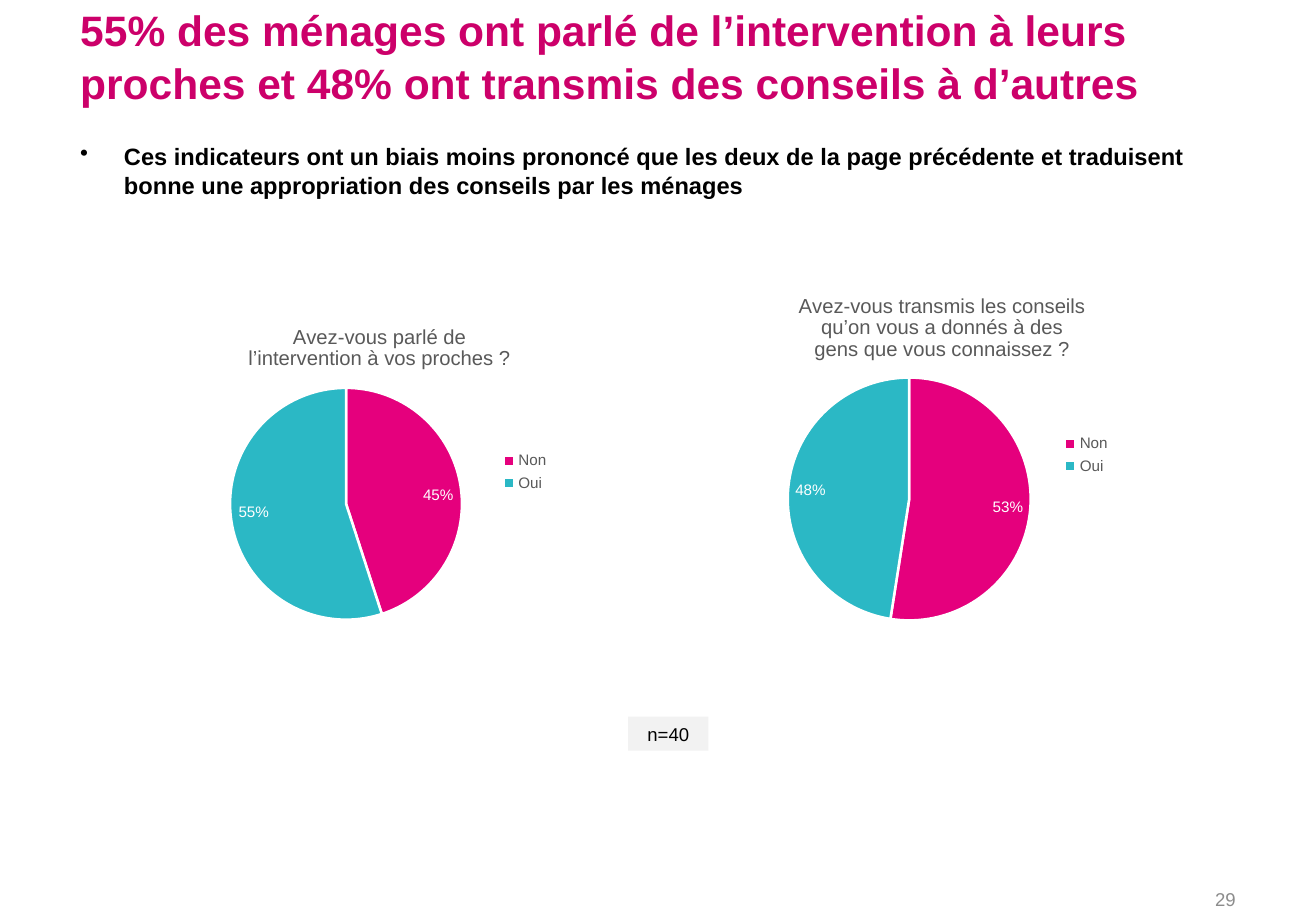
import pptx
import pptx.chart.data
import pptx.dml.color
import pptx.enum.chart
import pptx.enum.shapes
import pptx.enum.text
import pptx.oxml
import pptx.oxml.ns
import pptx.util
from pptx.util import Inches

FONT = "Arial"
BLACK, WHITE, GREY = "000000", "FFFFFF", "595959"
ANSWERS = {"Non": "E5007D", "Oui": "2BB8C5"}
ANCHOR = pptx.enum.text.MSO_ANCHOR
ALIGN = pptx.enum.text.PP_ALIGN


def color(value):
    return pptx.dml.color.RGBColor.from_string(value)


def style_font(font, size, value, bold=False):
    font.name = FONT
    font.size = pptx.util.Pt(size)
    font.bold = bold
    font.color.rgb = color(value)


def write_text(shape, text, size, value, bold=False, align=ALIGN.LEFT, anchor=ANCHOR.TOP):
    frame = shape.text_frame
    frame.word_wrap = True
    frame.vertical_anchor = anchor
    frame.margin_left = frame.margin_right = Inches(0.12)
    frame.margin_top = frame.margin_bottom = Inches(0.06)
    paragraph = frame.paragraphs[0]
    paragraph.alignment = align
    run = paragraph.add_run()
    run.text = text
    style_font(run.font, size, value, bold)
    return paragraph


def add_text(slide, box, *content, **options):
    shape = slide.shapes.add_textbox(*map(Inches, box))
    return write_text(shape, *content, **options)


def add_bullet(paragraph, indent):
    properties = paragraph._p.get_or_add_pPr()
    properties.set("marL", str(Inches(indent)))
    properties.set("indent", str(-Inches(indent)))
    bullet = pptx.oxml.parse_xml(
        f'<a:buChar {pptx.oxml.ns.nsdecls("a")} char="•"/>')
    properties.append(bullet)


def add_sample_size(slide, box, text):
    shape = slide.shapes.add_shape(
        pptx.enum.shapes.MSO_SHAPE.RECTANGLE, *map(Inches, box))
    shape.shadow.inherit = False
    shape.fill.solid()
    shape.fill.fore_color.rgb = color("F2F2F2")
    shape.line.fill.background()
    write_text(shape, text, 11, BLACK, align=ALIGN.CENTER, anchor=ANCHOR.MIDDLE)


def place(element, **fractions):
    """Fix a chart part at fractions of the chart's size."""
    target = '<c:layoutTarget val="inner"/>' if "w" in fractions else ""
    modes = "".join(f'<c:{key}Mode val="edge"/>' for key in "xy")
    sizes = "".join(f'<c:{key} val="{value}"/>' for key, value in fractions.items())
    layout = pptx.oxml.parse_xml(
        f'<c:layout {pptx.oxml.ns.nsdecls("c")}><c:manualLayout>'
        f"{target}{modes}{sizes}</c:manualLayout></c:layout>")
    for old in element.findall(pptx.oxml.ns.qn("c:layout")):
        element.remove(old)
    text = element.find(pptx.oxml.ns.qn("c:tx"))
    element.insert(0 if text is None else 1, layout)


def add_pie(slide, box, question, percentages, title_place, pie_place):
    data = pptx.chart.data.CategoryChartData()
    data.categories = list(ANSWERS)
    data.add_series("Series 1", percentages)
    chart = slide.shapes.add_chart(
        pptx.enum.chart.XL_CHART_TYPE.PIE, *map(Inches, box), data).chart
    style_font(chart.font, 10, BLACK)

    # Question above the pie
    run = chart.chart_title.text_frame.paragraphs[0].add_run()
    run.text = question
    style_font(run.font, 12, GREY)
    chart.chart_title.include_in_layout = False
    place(chart.chart_title._element, **title_place)

    # Legend
    chart.has_legend = True
    chart.legend.position = pptx.enum.chart.XL_LEGEND_POSITION.RIGHT
    chart.legend.include_in_layout = False
    style_font(chart.legend.font, 9, GREY)

    # Slices and labels
    plot = chart.plots[0]
    plot.vary_by_categories = True
    place(chart._chartSpace.chart.plotArea, **pie_place)
    for index, fill in enumerate(ANSWERS.values()):
        slice_format = plot.series[0].points[index].format
        slice_format.fill.solid()
        slice_format.fill.fore_color.rgb = color(fill)
        slice_format.line.color.rgb = color(WHITE)
        slice_format.line.width = pptx.util.Pt(1.5)
    labels = plot.series[0].data_labels
    labels.show_value = True
    labels.number_format = '0"%"'
    labels.number_format_is_linked = False
    labels.position = pptx.enum.chart.XL_LABEL_POSITION.INSIDE_END
    style_font(labels.font, 9, WHITE)


def main():
    presentation = pptx.Presentation()
    presentation.slide_width = Inches(10.83)
    presentation.slide_height = Inches(7.5)
    slide = presentation.slides.add_slide(presentation.slide_layouts[6])

    # Heading and key message
    heading = add_text(
        slide, (0.54, 0.01, 9.75, 0.94),
        "55% des ménages ont parlé de l’intervention à leurs proches "
        "et 48% ont transmis des conseils à d’autres",
        25.2, "CC006A", bold=True, anchor=ANCHOR.BOTTOM)
    heading.line_spacing = 1.04
    message = add_text(
        slide, (0.54, 1.11, 9.75, 0.59),
        "Ces indicateurs ont un biais moins prononcé que les deux de la page "
        "précédente et traduisent bonne une appropriation des conseils par les ménages",
        14, BLACK, bold=True)
    add_bullet(message, 0.36)

    # Survey answers
    add_pie(slide, (1.59, 2.5, 3.03, 2.77),
            "Avez-vous parlé de l’intervention à vos proches ?", (45, 55),
            {"x": 0.14, "y": 0.05}, {"x": 0.1, "y": 0.25, "w": 0.63, "h": 0.69})
    add_pie(slide, (6.21, 2.23, 3.03, 3.03),
            "Avez-vous transmis les conseils qu’on vous a donnés à des gens "
            "que vous connaissez ?", (53, 48),
            {"x": 0.11, "y": 0.05}, {"x": 0.09, "y": 0.29, "w": 0.66, "h": 0.66})

    # Sample size and page number
    add_sample_size(slide, (5.17, 5.9, 0.66, 0.28), "n=40")
    add_text(slide, (7.76, 7.25, 2.53, 0.3), "29", 11, "8C8C8C",
             align=ALIGN.RIGHT, anchor=ANCHOR.MIDDLE)

    presentation.save("out.pptx")


if __name__ == "__main__":
    main()
